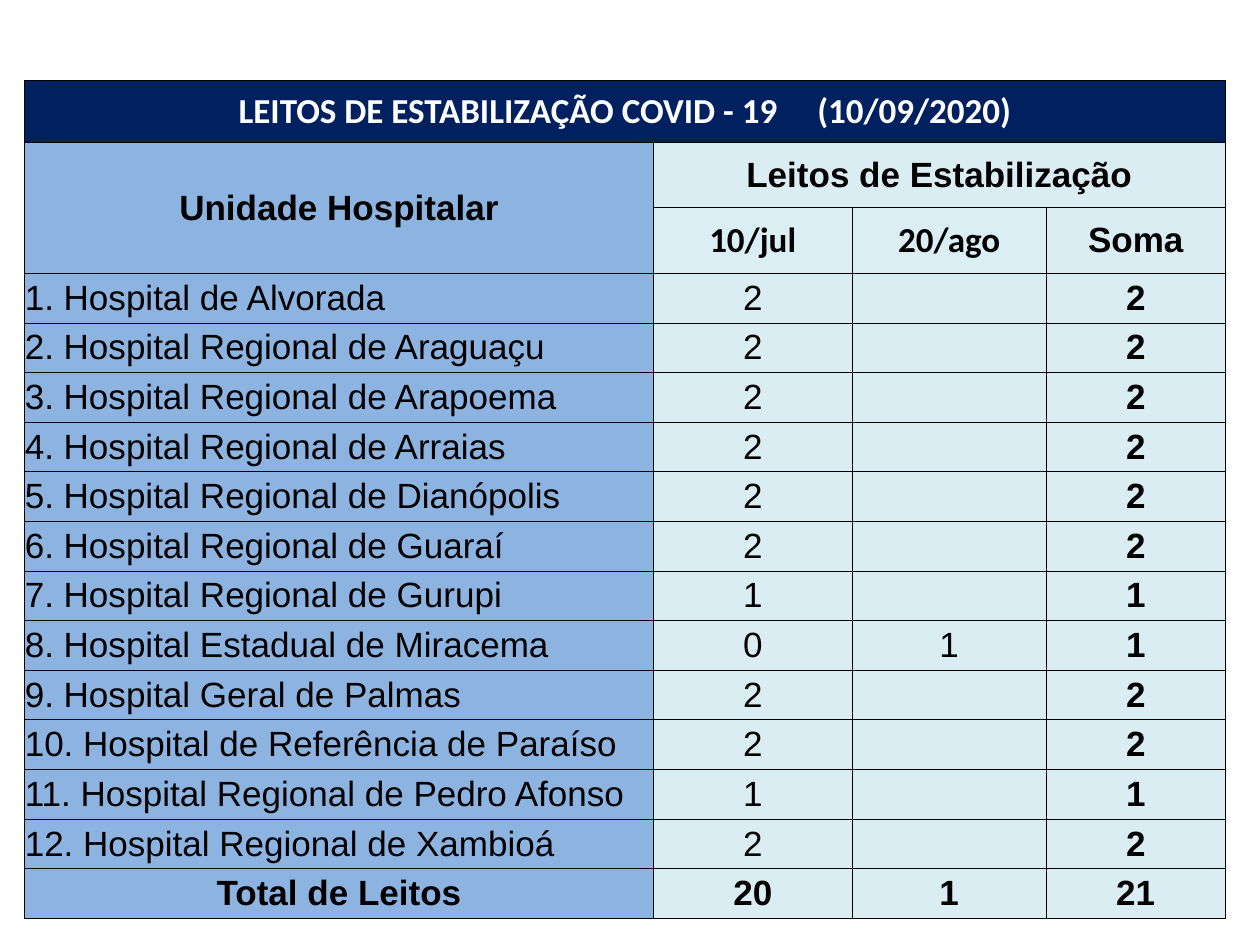
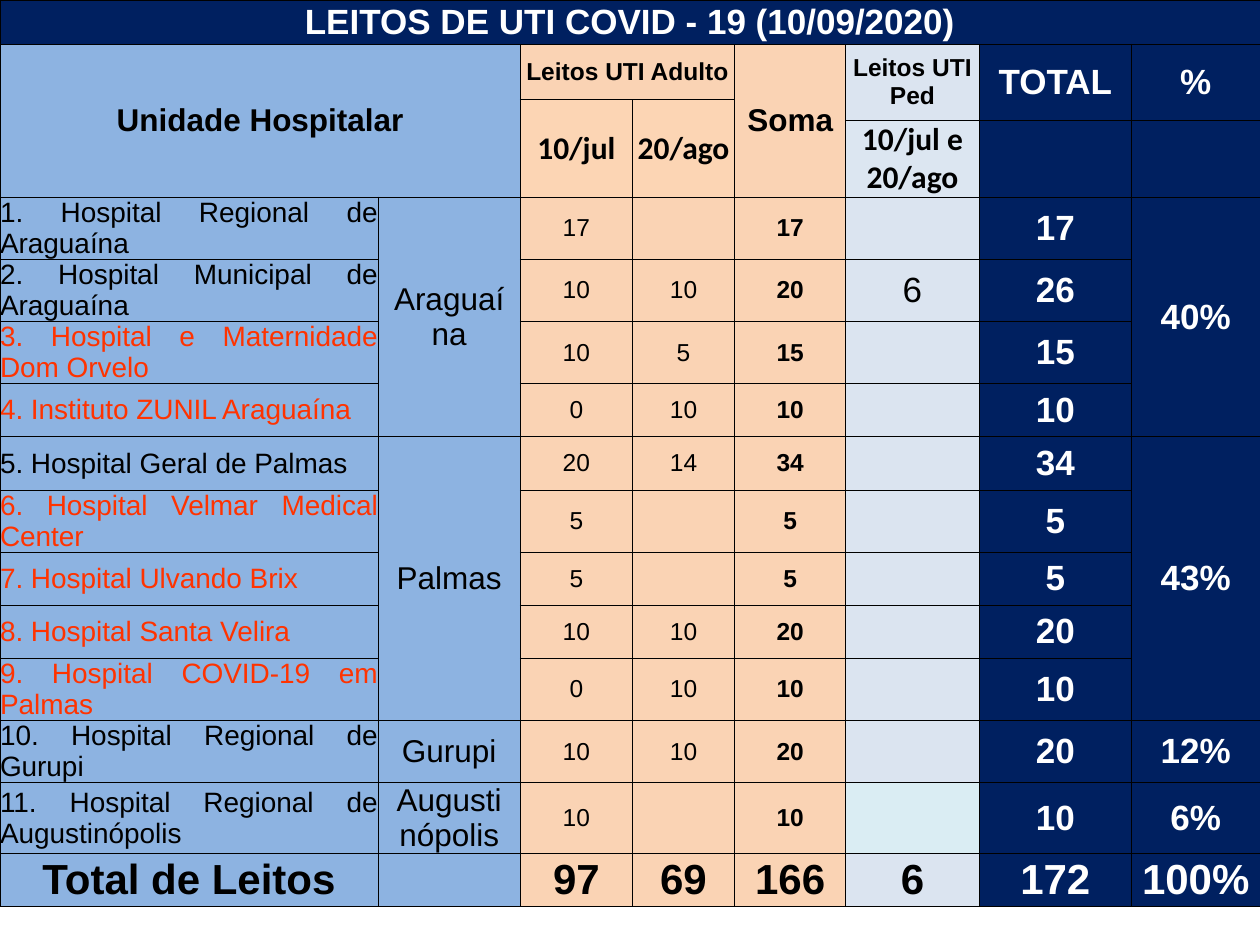
import dataclasses
import itertools

import lxml.etree
import pptx
import pptx.dml.color
import pptx.enum.text
import pptx.oxml
import pptx.oxml.ns
import pptx.util

Cm = pptx.util.Cm
ALIGN = pptx.enum.text.PP_ALIGN


@dataclasses.dataclass(frozen=True)
class Theme:
    navy: str = "002060"
    blue: str = "8DB3E1"
    ice: str = "DAEDF3"
    ice_date: str = "DAEEF3"
    peach: str = "FAD3B4"
    peach_date: str = "FCD5B4"
    lilac: str = "DBE4F0"
    lilac_date: str = "DCE6F1"
    white: str = "FFFFFF"
    black: str = "000000"
    private: str = "FF3300"
    font: str = "Arial"
    date_font: str = "Calibri"
    grand: int = 24
    large: int = 20
    medium: int = 18
    unit: int = 16
    small: int = 14
    border: float = 0.5
    title_gap: int = 18


THEME = Theme()

STABILIZATION_UNITS = [
    ("Hospital de Alvorada", 2, None),
    ("Hospital Regional de Araguaçu", 2, None),
    ("Hospital Regional de Arapoema", 2, None),
    ("Hospital Regional de Arraias", 2, None),
    ("Hospital Regional de Dianópolis", 2, None),
    ("Hospital Regional de Guaraí", 2, None),
    ("Hospital Regional de Gurupi", 1, None),
    ("Hospital Estadual de Miracema", 0, 1),
    ("Hospital Geral de Palmas", 2, None),
    ("Hospital de Referência de Paraíso", 2, None),
    ("Hospital Regional de Pedro Afonso", 1, None),
    ("Hospital Regional de Xambioá", 2, None),
]

ICU_UNITS = [
    ("Hospital Regional de Araguaína", "Araguaí\nna", 17, None, None, False, 1.25),
    ("Hospital Municipal de Araguaína", "Araguaí\nna", 10, 10, 6, False, 1.25),
    ("Hospital e Maternidade Dom Orvelo", "Araguaí\nna", 10, 5, None, True, 1.25),
    ("Instituto ZUNIL Araguaína", "Araguaí\nna", 0, 10, None, True, 1.07),
    ("Hospital Geral de Palmas", "Palmas", 20, 14, None, False, 1.07),
    ("Hospital Velmar Medical Center", "Palmas", 5, None, None, True, 1.25),
    ("Hospital Ulvando Brix", "Palmas", 5, None, None, True, 1.07),
    ("Hospital Santa Velira", "Palmas", 10, 10, None, True, 1.07),
    ("Hospital COVID-19 em Palmas", "Palmas", 0, 10, None, True, 1.25),
    ("Hospital Regional de Gurupi", "Gurupi", 10, 10, None, False, 1.25),
    ("Hospital Regional de Augustinópolis", "Augusti\nnópolis", 10, None, None, False, 1.41),
]


def write(frame, text, size=THEME.large, color=THEME.black, font=THEME.font,
          bold=False, align=ALIGN.CENTER):
    for index, line in enumerate(str(text).split("\n")):
        paragraph = frame.paragraphs[0] if index == 0 else frame.add_paragraph()
        paragraph.alignment = align
        run = paragraph.add_run()
        run.text = line
        run.font.size = pptx.util.Pt(size)
        run.font.name = font
        run.font.bold = bold
        run.font.color.rgb = pptx.dml.color.RGBColor.from_string(color)


def draw_borders(cell):
    properties = cell._tc.get_or_add_tcPr()
    for position, side in enumerate(("lnL", "lnR", "lnT", "lnB")):
        line = pptx.oxml.parse_xml(
            f'<a:{side} {pptx.oxml.ns.nsdecls("a")} w="{pptx.util.Pt(THEME.border)}">'
            f'<a:solidFill><a:srgbClr val="{THEME.black}"/></a:solidFill></a:{side}>')
        properties.insert(position, line)


def add_grid(slide, left, top, widths, heights):
    grid = slide.shapes.add_table(len(heights), len(widths), Cm(left), Cm(top),
                                  Cm(sum(widths)), Cm(sum(heights))).table
    grid.first_row = grid.horz_banding = False
    for column, width in zip(grid.columns, widths):
        column.width = Cm(width)
    for row, height in zip(grid.rows, heights):
        row.height = Cm(height)
    for cell in grid.iter_cells():
        cell.margin_left = cell.margin_right = cell.margin_top = cell.margin_bottom = 0
        cell.vertical_anchor = pptx.enum.text.MSO_ANCHOR.MIDDLE
        draw_borders(cell)
    return grid


def put(grid, row, column, text, fill, span=(1, 1), **text_format):
    cell = grid.cell(row, column)
    if span != (1, 1):
        cell.merge(grid.cell(row + span[0] - 1, column + span[1] - 1))
    cell.fill.solid()
    cell.fill.fore_color.rgb = pptx.dml.color.RGBColor.from_string(fill)
    if text is not None:
        write(cell.text_frame, text, **text_format)
    return cell


def total(values):
    return sum(value or 0 for value in values)


def build_stabilization(slide):
    heights = [1.25, 1.32, 1.32] + [1] * (len(STABILIZATION_UNITS) + 1)
    grid = add_grid(slide, 0.5, 1.62, [12.67, 4.01, 3.91, 3.61], heights)
    banner = put(grid, 0, 0, "LEITOS DE ESTABILIZAÇÃO COVID - 19", THEME.navy, (1, 4),
                 color=THEME.white, font=THEME.date_font, bold=True)
    for piece in (" ", "(10/09/2020)"):
        write(banner.text_frame, piece, color=THEME.white, font=THEME.date_font, bold=True)
    gap = banner.text_frame.paragraphs[0].runs[1]
    gap._r.get_or_add_rPr().set("spc", str(THEME.title_gap * 100))

    put(grid, 1, 0, "Unidade Hospitalar", THEME.blue, (2, 1), bold=True)
    put(grid, 1, 1, "Leitos de Estabilização", THEME.ice, (1, 3), bold=True)
    for column, date in enumerate(("10/jul", "20/ago"), 1):
        put(grid, 2, column, date, THEME.ice_date, font=THEME.date_font, bold=True)
    put(grid, 2, 3, "Soma", THEME.ice, bold=True)

    for number, (unit, july, august) in enumerate(STABILIZATION_UNITS, 1):
        row = number + 2
        put(grid, row, 0, f"{number}. {unit}", THEME.blue, align=ALIGN.LEFT)
        put(grid, row, 1, july, THEME.ice)
        put(grid, row, 2, august, THEME.ice)
        put(grid, row, 3, total((july, august)), THEME.ice, bold=True)

    july, august = (total(column) for column in list(zip(*STABILIZATION_UNITS))[1:])
    put(grid, len(heights) - 1, 0, "Total de Leitos", THEME.blue, bold=True)
    for column, beds in enumerate((july, august, july + august), 1):
        put(grid, len(heights) - 1, column, beds, THEME.ice, bold=True)


def put_icu_headings(grid):
    light = dict(color=THEME.white, bold=True)
    medium = dict(size=THEME.medium, bold=True)
    small = dict(size=THEME.small, bold=True)
    dates = dict(medium, font=THEME.date_font)
    put(grid, 0, 0, "LEITOS DE UTI COVID - 19 (10/09/2020)", THEME.navy, (1, 8), **light)
    put(grid, 1, 0, "Unidade Hospitalar", THEME.blue, (3, 2), **medium)
    put(grid, 1, 2, "Leitos UTI Adulto", THEME.peach, (1, 2), **small)
    put(grid, 1, 4, "Soma", THEME.peach, (3, 1), **medium)
    put(grid, 1, 5, "Leitos UTI Ped", THEME.lilac, (2, 1), **small)
    put(grid, 2, 2, "10/jul", THEME.peach_date, (2, 1), **dates)
    put(grid, 2, 3, "20/ago", THEME.peach_date, (2, 1), **dates)
    put(grid, 3, 5, "10/jul e 20/ago", THEME.lilac_date, **dates)
    for column, heading in ((6, "TOTAL"), (7, "%")):
        put(grid, 1, column, heading, THEME.navy, (2, 1), **light)
        put(grid, 3, column, None, THEME.navy)


def build_icu(slide):
    first_unit_row = 4
    heights = [0.89, 1.12, 0.41, 1.55] + [unit[-1] for unit in ICU_UNITS] + [1.07]
    grid = add_grid(slide, 0, 0, [7.62, 2.87, 2.26, 2.06, 2.24, 2.69, 3.07, 2.59], heights)
    light = dict(color=THEME.white, bold=True)
    put_icu_headings(grid)

    last_row = len(heights) - 1
    for number, (unit, _, july, august, child, private, _) in enumerate(ICU_UNITS, 1):
        row = first_unit_row + number - 1
        put(grid, row, 0, f"{number}. {unit}", THEME.blue, size=THEME.unit,
            color=THEME.private if private else THEME.black, align=ALIGN.JUSTIFY)
        put(grid, row, 2, july, THEME.peach, size=THEME.small)
        put(grid, row, 3, august, THEME.peach, size=THEME.small)
        put(grid, row, 4, total((july, august)), THEME.peach, size=THEME.small, bold=True)
        put(grid, row, 5, child, THEME.ice if row == last_row - 1 else THEME.lilac)
        put(grid, row, 6, total((july, august, child)), THEME.navy, **light)

    july, august, child = (total(column) for column in list(zip(*ICU_UNITS))[2:5])
    all_beds = july + august + child
    row = first_unit_row
    for city, units in itertools.groupby(ICU_UNITS, key=lambda unit: unit[1]):
        units = list(units)
        share = sum(total(unit[2:5]) for unit in units) / all_beds
        put(grid, row, 1, city, THEME.blue, (len(units), 1), size=THEME.medium)
        put(grid, row, 7, f"{share:.0%}", THEME.navy, (len(units), 1), **light)
        row += len(units)

    fills = [THEME.blue] * 2 + [THEME.peach] * 3 + [THEME.lilac] + [THEME.navy] * 2
    totals = ["Total de Leitos", None, july, august, july + august, child, all_beds, "100%"]
    for column, (value, fill) in enumerate(zip(totals, fills)):
        color = THEME.white if fill == THEME.navy else THEME.black
        put(grid, last_row, column, value, fill, size=THEME.grand, color=color, bold=True)


def main():
    deck = pptx.Presentation()
    deck.slide_width, deck.slide_height = Cm(25.4), Cm(19.05)
    blank = deck.slide_layouts[6]
    for build in (build_stabilization, build_icu):
        build(deck.slides.add_slide(blank))
    deck.save("out.pptx")


if __name__ == "__main__":
    main()
